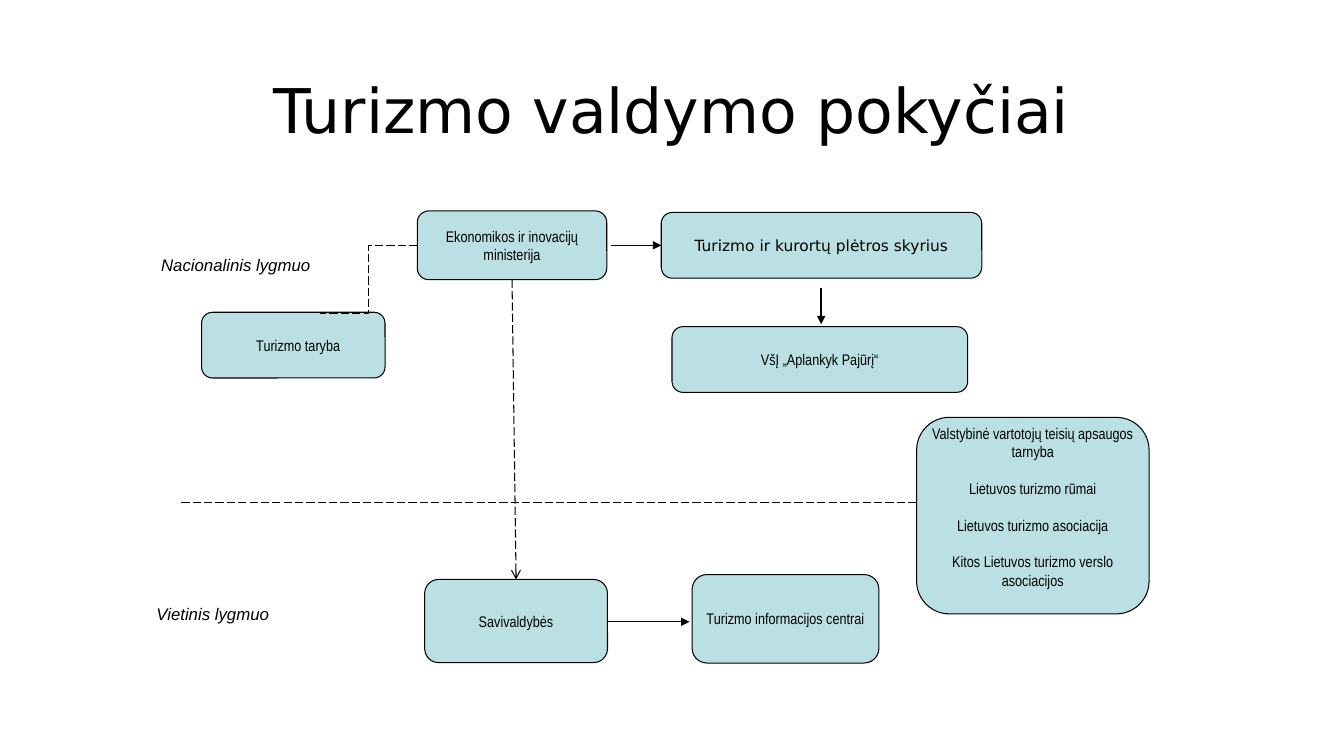
from lxml import etree
from pptx import Presentation
from pptx.dml.color import RGBColor
from pptx.enum.dml import MSO_LINE
from pptx.enum.shapes import MSO_CONNECTOR, MSO_SHAPE
from pptx.enum.text import MSO_ANCHOR, PP_ALIGN
from pptx.oxml.ns import qn
from pptx.util import Inches, Pt

BLACK = RGBColor(0x00, 0x00, 0x00)
PALE_TEAL = RGBColor(0xBB, 0xE0, 0xE3)
ROUNDED = MSO_SHAPE.ROUNDED_RECTANGLE
STRAIGHT, ELBOW = MSO_CONNECTOR.STRAIGHT, MSO_CONNECTOR.ELBOW
LONG_DASH = MSO_LINE.LONG_DASH
CENTER, MIDDLE = PP_ALIGN.CENTER, MSO_ANCHOR.MIDDLE
TOP, LEFT, BOTTOM = 0, 1, 2

# Grid of 100 columns by 100 rows over the slide
WIDTH, HEIGHT = Inches(13.33), Inches(7.5)
COL, ROW = WIDTH / 100, HEIGHT / 100

TITLE_FONT = {"name": "DejaVu Sans", "size": Pt(44)}
LABEL_FONT = {"name": "Arial", "size": Pt(12), "italic": True}
NARROW_FONT = {"name": "Arial Narrow", "size": Pt(11)}
WIDE_FONT = {"name": "DejaVu Sans", "size": Pt(11)}
NO_MARGINS = dict.fromkeys(
    ("margin_left", "margin_top", "margin_right", "margin_bottom"), 0)

# Regions: left column, top row, columns, rows
TITLE = (6.9, 5.33, 86.2, 19.33)
NATIONAL = (10, 25, 65, 30)
LOCAL = (10, 75, 56, 15)
PARTNERS = (68.2, 55.2, 17.3, 26)


def apply(target, values):
    for name, value in values.items():
        setattr(target, name, value)


def locate(region, column, row):
    return round((region[0] + column) * COL), round((region[1] + row) * ROW)


def area(region, column, row, columns, rows):
    return (*locate(region, column, row), round(columns * COL), round(rows * ROW))


def format_para(para, text, font):
    para.text = text
    apply(para.font, font)
    para.font.color.rgb = BLACK


def add_box(page, bounds, texts, font=NARROW_FONT, gap=0, **margins):
    box = page.shapes.add_shape(ROUNDED, *bounds)
    box.shadow.inherit = False
    box.fill.solid()
    box.fill.fore_color.rgb = PALE_TEAL
    box.line.color.rgb = BLACK
    box.line.width = Pt(0.75)
    frame = box.text_frame
    apply(frame, {**NO_MARGINS, **margins,
                  "word_wrap": True, "vertical_anchor": MIDDLE})
    for index, text in enumerate(texts):
        para = frame.add_paragraph() if index else frame.paragraphs[0]
        format_para(para, text, font)
        para.alignment = CENTER
        if index:
            para.space_before = Pt(gap)
    return box


def add_line(page, start, end, head=None, dashed=False, width=0.75, kind=STRAIGHT):
    line = page.shapes.add_connector(kind, *start, *end)
    line.line.color.rgb = BLACK
    line.line.width = Pt(width)
    if dashed:
        line.line.dash_style = LONG_DASH
    if head:
        etree.SubElement(line.line._get_or_add_ln(), qn("a:tailEnd"), type=head)
    etree.SubElement(line._element.spPr, qn("a:effectLst"))
    return line


def add_label(page, bounds, text):
    label = page.shapes.add_textbox(*bounds)
    label.text_frame.word_wrap = False
    format_para(label.text_frame.paragraphs[0], text, LABEL_FONT)


def add_title(page, region):
    title = page.shapes.title
    apply(title, dict(zip(("left", "top", "width", "height"),
                          area(region, 0, 0, *region[2:]))))
    title.text_frame.vertical_anchor = MIDDLE
    para = title.text_frame.paragraphs[0]
    format_para(para, "Turizmo valdymo pokyčiai", TITLE_FONT)
    apply(para, {"alignment": CENTER, "line_spacing": 0.9})


def add_national_level(page, region):
    add_label(page, area(region, 1.25, 8.05, 13.8, 4), "Nacionalinis lygmuo")
    ministry = add_box(page, area(region, 21.05, 2.9, 14.1, 9.1),
                       ["Ekonomikos ir inovacijų ministerija"])
    add_box(page, area(region, 5, 16.3, 13.65, 8.7), ["Turizmo taryba"],
            margin_left=Inches(0.1))
    section = add_box(page, area(region, 39.2, 3.1, 23.85, 8.7),
                      ["Turizmo ir kurortų plėtros skyrius"], WIDE_FONT)
    add_box(page, area(region, 40, 18.2, 22, 8.7), ["VšĮ „Aplankyk Pajūrį“"])

    # Links from the ministry and its section
    council_link = add_line(page, locate(region, 21.05, 7.45),
                            locate(region, 13.85, 16.45), dashed=True, kind=ELBOW)
    council_link.begin_connect(ministry, LEFT)
    section_link = add_line(page, locate(region, 35.45, 7.45),
                            locate(region, 39.2, 7.45), "triangle", width=1)
    section_link.end_connect(section, LEFT)
    add_line(page, locate(region, 51.1, 13.1), locate(region, 51.1, 17.9),
             "triangle", width=1)
    return ministry


def add_local_level(page, region):
    add_label(page, area(region, 0.9, 4.2, 10.8, 4), "Vietinis lygmuo")
    # The arrow starts behind the municipalities box
    add_line(page, locate(region, 32.3, 7.25), locate(region, 41.3, 7.25),
             "triangle", width=1)
    municipalities = add_box(page, area(region, 21.6, 1.65, 13.6, 11),
                             ["Savivaldybės"])
    add_box(page, area(region, 41.5, 1, 13.9, 11.7),
            ["Turizmo informacijos centrai"])
    return municipalities


def add_partners(page, region):
    # The level divider runs in behind the partners box
    add_line(page, locate(region, -54.7, 11.3), locate(region, 4.55, 11.3),
             dashed=True)
    add_box(page, area(region, 0, 0, *region[2:]),
            ["Valstybinė vartotojų teisių apsaugos tarnyba",
             "Lietuvos turizmo rūmai",
             "Lietuvos turizmo asociacija",
             "Kitos Lietuvos turizmo verslo asociacijos"],
            gap=13, margin_bottom=Inches(0.18))


def main():
    deck = Presentation()
    apply(deck, {"slide_width": WIDTH, "slide_height": HEIGHT})
    page = deck.slides.add_slide(deck.slide_layouts.get_by_name("Title Only"))
    add_title(page, TITLE)
    ministry = add_national_level(page, NATIONAL)
    municipalities = add_local_level(page, LOCAL)
    add_partners(page, PARTNERS)

    # Link between the two levels
    level_link = add_line(page, (0, 0), (0, 0), "arrow", dashed=True)
    level_link.begin_connect(ministry, BOTTOM)
    level_link.end_connect(municipalities, TOP)
    deck.save("out.pptx")


if __name__ == "__main__":
    main()
